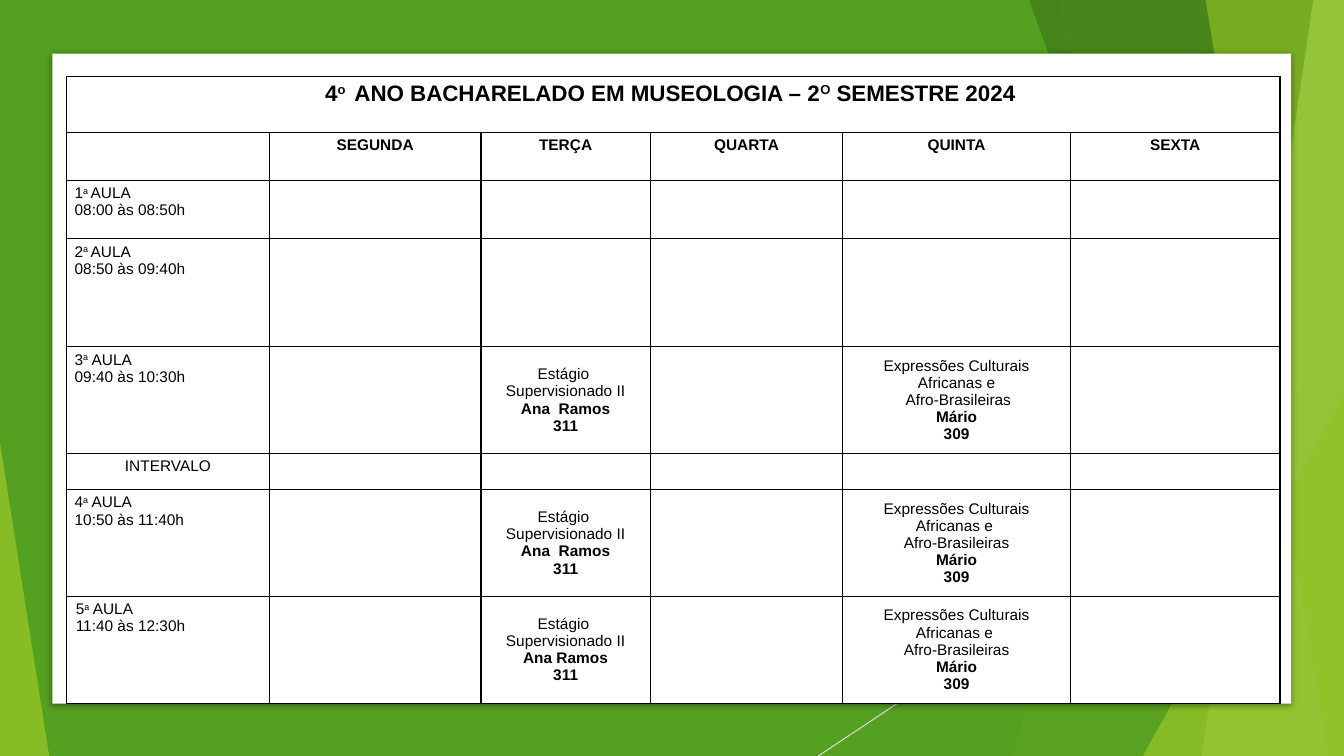
"""Build the weekly class timetable slide of the museology degree."""
from dataclasses import dataclass

from lxml.etree import SubElement
from pptx import Presentation
from pptx.dml.color import RGBColor
from pptx.enum.shapes import MSO_CONNECTOR, MSO_SHAPE
from pptx.enum.text import MSO_ANCHOR, PP_ALIGN
from pptx.oxml.ns import qn
from pptx.shapes.autoshape import Shape
from pptx.slide import Slide
from pptx.table import Table, _Cell
from pptx.util import Cm, Pt

COLOURS = {
    "green": "54A021",
    "lime": "90C226",
    "forest": "3F7819",
    "pale lime": "C0E474",
    "grey": "D9D9D9",
    "white": "FFFFFF",
    "black": "000000",
}
WIDTH, HEIGHT = 33.87, 19.05
FACET_TOP = -0.02
COLUMN_WIDTHS = (5.11, 5.33, 4.27, 4.85, 5.74, 5.28)
ROW_HEIGHTS = (1.4, 1.22, 1.47, 2.72, 2.69, 0.91, 2.69, 2.69)
DAYS = ("SEGUNDA", "TERÇA", "QUARTA", "QUINTA", "SEXTA")
FONT = "Arial"
TEXT_SIZE = 11


@dataclass(frozen=True)
class Facet:
    top_x: float
    bottom_x: float
    colour: str
    opacity: int


@dataclass(frozen=True)
class Wedge:
    left: float
    top: float
    width: float
    peak: float
    colour: str
    opacity: int


@dataclass(frozen=True)
class Entry:
    row: int
    column: int
    lines: tuple[str, ...]
    size: int = TEXT_SIZE
    centred: bool = True
    middle: bool = False
    bold_lines: int = 0
    side_margin: float = 0.23


BACKDROP = (
    Facet(31.19, 25.5, "lime", 30),
    Facet(26.67, 30.05, "lime", 20),
    Wedge(24.82, 8.46, 9.05, 1, "green", 72),
    Facet(25.93, 32.79, "forest", 70),
    Facet(33.1, 30.28, "pale lime", 70),
    Facet(30.38, 33.48, "lime", 65),
    Wedge(28.8, 9.98, 5.07, 1, "lime", 80),
    Wedge(0, 11.15, 1.24, 0, "lime", 85),
)


def label(row: int, title: str, hours: str, margin: float = 0.2) -> Entry:
    return Entry(row, 0, (title, hours), centred=False, side_margin=margin)


def internship(row: int, teacher: str = "Ana  Ramos") -> Entry:
    lines = ("Estágio ", "Supervisionado II", teacher, "311")
    return Entry(row, 2, lines, middle=True, bold_lines=2)


def cultures(row: int, first: str = "Expressões Culturais Africanas e ",
             second: str = "Afro-Brasileiras") -> Entry:
    return Entry(row, 4, (first, second, "Mário", "309"), middle=True, bold_lines=2)


ENTRIES = (
    Entry(0, 0, ("4^o ^ ANO BACHARELADO EM MUSEOLOGIA – 2^O^ SEMESTRE 2024 ",),
          size=16, bold_lines=1),
    *(Entry(1, column, (day,), bold_lines=1) for column, day in enumerate(DAYS, 1)),
    label(2, "1^a ^AULA", "08:00 às 08:50h"),
    label(3, "2^a ^AULA", "08:50 às 09:40h"),
    label(4, "3^a^ AULA", "09:40 às 10:30h"),
    Entry(5, 0, ("INTERVALO",)),
    label(6, "4^a^ AULA", "10:50 às 11:40h"),
    label(7, "5^a^ AULA", "11:40 às 12:30h", 0.23),
    internship(4),
    internship(6),
    internship(7, "Ana Ramos"),
    cultures(4, "Expressões Culturais Africanas e", " Afro-Brasileiras"),
    cultures(6),
    cultures(7),
)


def rgb(colour: str) -> RGBColor:
    return RGBColor.from_string(COLOURS[colour])


def paint(shape: Shape, colour: str, opacity: int = 100) -> None:
    shape.shadow.inherit = False
    shape.line.fill.background()
    shape.fill.solid()
    shape.fill.fore_color.rgb = rgb(colour)
    if opacity < 100:
        tint = shape.fill._xPr.find(qn("a:solidFill"))[0]
        SubElement(tint, qn("a:alpha"), val=str(opacity * 1000))


def add_box(page: Slide, left: float, top: float, width: float, height: float,
            colour: str) -> Shape:
    box = page.shapes.add_shape(
        MSO_SHAPE.RECTANGLE, Cm(left), Cm(top), Cm(width), Cm(height))
    paint(box, colour)
    return box


def add_facet(page: Slide, facet: Facet) -> None:
    builder = page.shapes.build_freeform(Cm(facet.top_x), Cm(FACET_TOP))
    corners = ((WIDTH, FACET_TOP), (WIDTH, HEIGHT), (facet.bottom_x, HEIGHT))
    builder.add_line_segments([(Cm(x), Cm(y)) for x, y in corners], close=True)
    paint(builder.convert_to_shape(), facet.colour, facet.opacity)


def add_wedge(page: Slide, wedge: Wedge) -> None:
    triangle = page.shapes.add_shape(
        MSO_SHAPE.ISOSCELES_TRIANGLE, Cm(wedge.left), Cm(wedge.top),
        Cm(wedge.width), Cm(HEIGHT - wedge.top))
    triangle.adjustments[0] = wedge.peak
    paint(triangle, wedge.colour, wedge.opacity)


def add_backdrop(page: Slide) -> None:
    add_box(page, 0, 0, WIDTH, HEIGHT, "green")
    line = page.shapes.add_connector(
        MSO_CONNECTOR.STRAIGHT, Cm(WIDTH), Cm(10.24), Cm(20.62), Cm(HEIGHT))
    line.line.color.rgb = rgb("grey")
    line.line.width = Pt(0.75)
    SubElement(line._element.spPr, qn("a:effectLst"))
    for piece in BACKDROP:
        if isinstance(piece, Facet):
            add_facet(page, piece)
        else:
            add_wedge(page, piece)


def add_panel(page: Slide) -> None:
    panel = add_box(page, 1.32, 1.35, 31.22, 16.38, "white")
    effects = panel._element.spPr.find(qn("a:effectLst"))
    shadow = SubElement(effects, qn("a:outerShdw"), blurRad=str(Pt(5)),
                        dist=str(Pt(1.4)), dir="5400000", rotWithShape="0")
    tint = SubElement(shadow, qn("a:srgbClr"), val=COLOURS["black"])
    SubElement(tint, qn("a:alpha"), val="43000")


def format_cell(cell: _Cell) -> None:
    properties = cell._tc.get_or_add_tcPr()
    for side in ("lnL", "lnR", "lnT", "lnB"):
        border = SubElement(properties, qn(f"a:{side}"), w=str(Pt(1)))
        fill = SubElement(border, qn("a:solidFill"))
        SubElement(fill, qn("a:srgbClr"), val=COLOURS["black"])
    cell.fill.background()
    cell.margin_top = cell.margin_bottom = Cm(0.11)
    ending = cell.text_frame.paragraphs[0]._p.get_or_add_endParaRPr()
    ending.set("sz", str(TEXT_SIZE * 100))


def write_entry(table: Table, entry: Entry) -> None:
    cell = table.cell(entry.row, entry.column)
    cell.margin_left = cell.margin_right = Cm(entry.side_margin)
    cell.vertical_anchor = MSO_ANCHOR.MIDDLE if entry.middle else MSO_ANCHOR.TOP
    first_bold = len(entry.lines) - entry.bold_lines
    for number, line in enumerate(entry.lines):
        frame = cell.text_frame
        para = frame.add_paragraph() if number else frame.paragraphs[0]
        para.alignment = PP_ALIGN.CENTER if entry.centred else PP_ALIGN.LEFT
        for index, words in enumerate(line.split("^")):
            span = para.add_run()
            span.text = words
            span.font.name = FONT
            span.font.size = Pt(entry.size)
            span.font.bold = number >= first_bold
            span.font.color.rgb = rgb("black")
            if index % 2:
                span.font._element.set("baseline", "30000")


def add_timetable(page: Slide) -> None:
    table = page.shapes.add_table(
        len(ROW_HEIGHTS), len(COLUMN_WIDTHS), Cm(1.68), Cm(1.93),
        Cm(sum(COLUMN_WIDTHS)), Cm(sum(ROW_HEIGHTS))).table
    table.first_row = table.horz_banding = False
    for column, width in zip(table.columns, COLUMN_WIDTHS):
        column.width = Cm(width)
    for row, height in zip(table.rows, ROW_HEIGHTS):
        row.height = Cm(height)
    for cell in table.iter_cells():
        format_cell(cell)
    table.cell(0, 0).merge(table.cell(0, len(COLUMN_WIDTHS) - 1))
    for entry in ENTRIES:
        write_entry(table, entry)


def main() -> None:
    deck = Presentation()
    deck.slide_width, deck.slide_height = Cm(WIDTH), Cm(HEIGHT)
    page = deck.slides.add_slide(deck.slide_layouts[6])
    add_backdrop(page)
    add_panel(page)
    add_timetable(page)
    deck.save("out.pptx")


if __name__ == "__main__":
    main()
